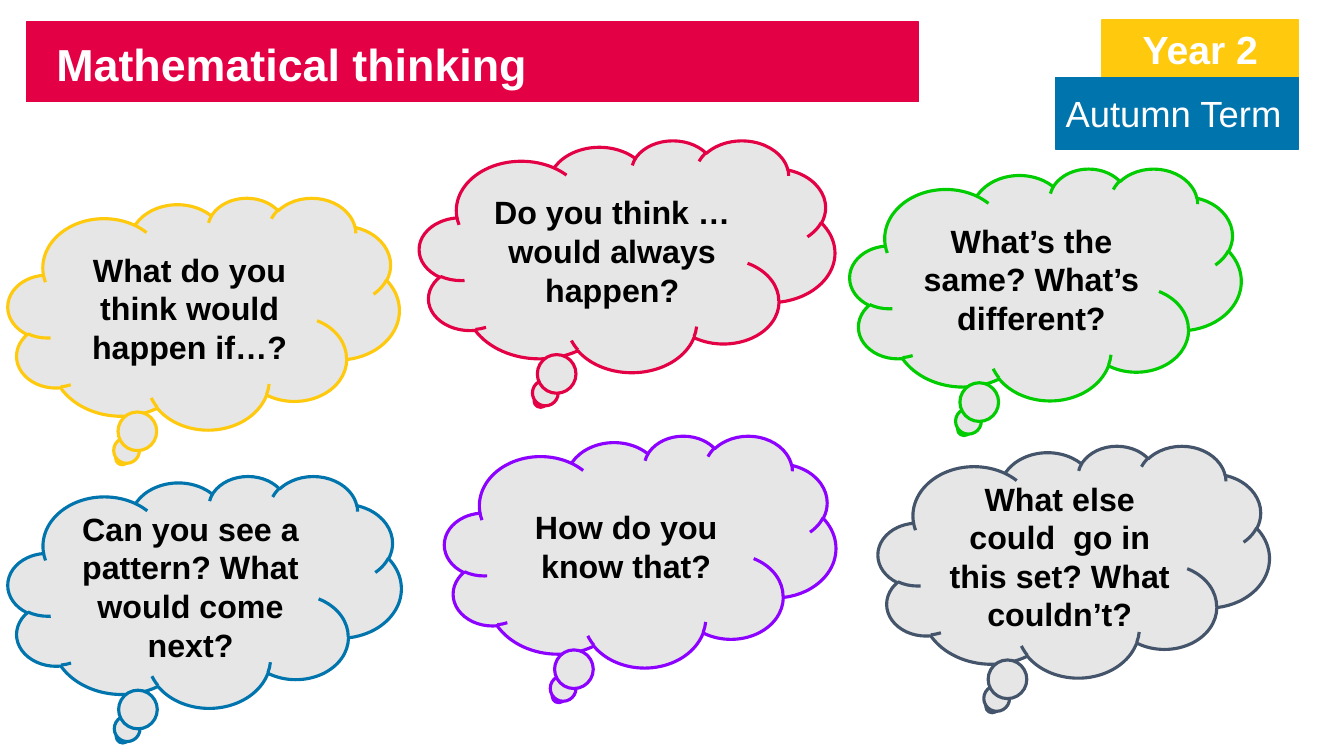
from pptx import Presentation
from pptx.dml.color import RGBColor as RGB
from pptx.enum.shapes import MSO_SHAPE as SHAPE
from pptx.enum.text import MSO_ANCHOR as ANCHOR, PP_ALIGN as ALIGN
from pptx.util import Pt

PX = 9144  # 100 px to the inch
HUES = {
    "red": "E40045", "gold": "FFC90D", "blue": "0074AC", "green": "00CC00",
    "violet": "8C01FF", "slate": "44546A", "grey": "E6E6E6",
    "white": "FFFFFF", "black": "000000",
}
WIDE, HIGH = 388, 230  # usual size of a thought cloud
CLOUDS = [
    ("What do you think would happen if…?", "gold", (8, 196, WIDE, HIGH)),
    ("Do you think … would always happen?", "red", (416, 139, 412, HIGH)),
    ("What’s the same? What’s different?", "green", (843, 167, WIDE, HIGH)),
    ("Can you see a pattern? What would come next?", "blue", (8, 472, 390, HIGH)),
    ("How do you know that?", "violet", (441, 432, WIDE, HIGH)),
    ("What else could  go in this set? What couldn’t?", "slate", (871, 442, WIDE, HIGH)),
]


def hue(name):
    return RGB.from_string(HUES[name])


def emu(box):
    return [n * PX for n in box]


def write(shape, text, size, color, bold=True, align=ALIGN.CENTER, wrap=True):
    frame = shape.text_frame
    frame.word_wrap = wrap
    frame.vertical_anchor = ANCHOR.MIDDLE
    para = frame.paragraphs[0]
    para.alignment = align
    run = para.add_run()
    run.text = text
    look = {"name": "Arial", "size": Pt(size), "bold": bold}
    for key, value in look.items():
        setattr(run.font, key, value)
    run.font.color.rgb = hue(color)


def draw(slide, kind, box, fill, line, width=1):
    shape = slide.shapes.add_shape(kind, *emu(box))
    shape.shadow.inherit = False
    shape.fill.solid()
    shape.fill.fore_color.rgb = hue(fill)
    shape.line.color.rgb = hue(line)
    shape.line.width = Pt(width)
    return shape


def banner(slide, box):
    x, y, _, _ = box
    draw(slide, SHAPE.RECTANGLE, box, "red", "red")
    title = slide.shapes.add_textbox(*emu((x + 20, y + 9, 491, 64)))
    write(title, "Mathematical thinking", 32, "white", align=ALIGN.LEFT, wrap=False)


def badge(slide, box):
    """Year tab, flush right on top of the term tab."""
    x, y, w, h = box
    tab = 57
    year = draw(slide, SHAPE.RECTANGLE, (x + 46, y, w - 46, tab), "gold", "gold")
    write(year, "Year 2", 28, "white")
    term = draw(slide, SHAPE.RECTANGLE, (x, y + tab, w, h - tab), "blue", "blue")
    write(term, "Autumn Term", 26, "white", bold=False, align=ALIGN.LEFT)


def cloud(slide, text, color, box):
    shape = draw(slide, SHAPE.CLOUD_CALLOUT, box, "grey", color, 2.25)
    write(shape, text, 23, "black")


def main():
    deck = Presentation()
    deck.slide_width, deck.slide_height = emu((1333, 750))
    slide = deck.slides.add_slide(deck.slide_layouts[6])
    banner(slide, (26, 22, 885, 79))
    for text, color, box in CLOUDS:
        cloud(slide, text, color, box)
    badge(slide, (1047, 20, 241, 128))
    deck.save("out.pptx")


if __name__ == "__main__":
    main()
